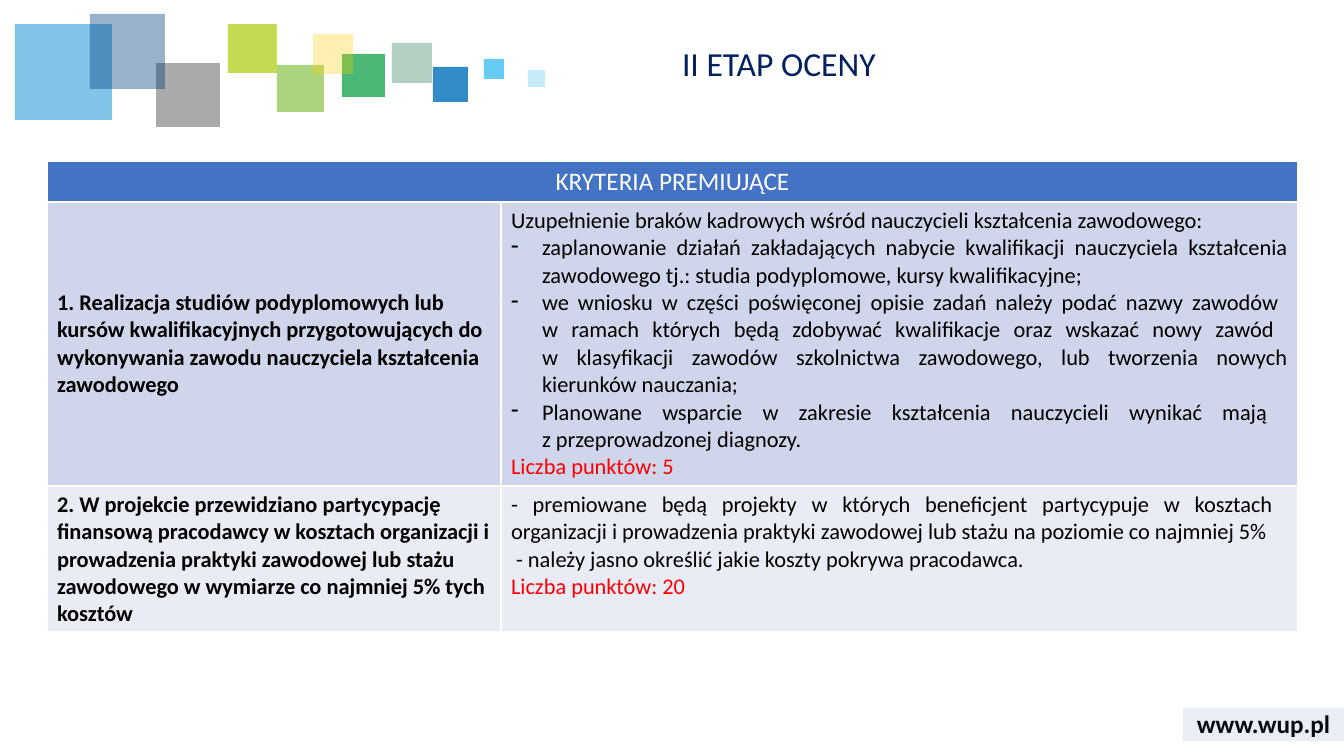
from copy import deepcopy
from pptx import Presentation
from pptx.dml.color import RGBColor
from pptx.enum.shapes import MSO_SHAPE
from pptx.enum.text import MSO_ANCHOR, PP_ALIGN
from pptx.oxml.ns import qn
from pptx.util import Emu, Pt
from lxml.etree import SubElement

COLORS = {
    "black": "000000", "white": "FFFFFF", "red": "FF0000", "navy": "002060",
    "header": "4472C4", "band_dark": "CFD5EA", "band_light": "E9EBF5", "footer": "2F5597",
    "pine": "006138", "blue": "006EB9", "green": "009A3C", "azure": "028BD3",
    "leaf": "75B82A", "gray": "575757", "indigo": "003D7C", "sky": "40C0F1",
    "lime": "AFCA0B", "yellow": "FED000",
}


def px(*lengths):
    return [Emu(round(length * 914400 / 100.8)) for length in lengths]


def write(frame, text, size=16, color="black", bold=False, align=PP_ALIGN.LEFT, bullet=None, spacing=None):
    paragraph = frame.paragraphs[0] if not frame.text else frame.add_paragraph()
    paragraph.text = text
    paragraph.alignment = align
    if spacing:
        paragraph.line_spacing = spacing
    if bullet:
        properties = paragraph._p.get_or_add_pPr()
        indent = px(31)[0]
        properties.set("marL", str(indent))
        properties.set("indent", str(-indent))
        SubElement(properties, qn("a:buChar")).set("char", bullet)
    for run in paragraph.runs:
        run.font.name = "Calibri"
        run.font.size = Pt(size)
        run.font.bold = bold
        run.font.color.rgb = RGBColor.from_string(COLORS[color])
    for line_break in paragraph._p.findall(qn("a:br")):
        line_break.append(deepcopy(paragraph.runs[0]._r.rPr))


presentation = Presentation()
presentation.slide_width, presentation.slide_height = px(1344, 756)
slide = presentation.slides.add_slide(presentation.slide_layouts[5])

title = slide.shapes.title
title.left, title.top, title.width, title.height = px(672, 42, 641, 55)
title.text_frame.vertical_anchor = MSO_ANCHOR.TOP
write(title.text_frame, "II ETAP OCENY", size=24, color="navy", spacing=0.9)

footer = slide.shapes.add_textbox(*px(1183, 703, 161, 40))
footer.text_frame.word_wrap = True
footer.text_frame.vertical_anchor = MSO_ANCHOR.MIDDLE
write(footer.text_frame, "www.wup.pl", size=18, bold=True, align=PP_ALIGN.CENTER)

rectangles = [
    (392, 43, 40, 40, "pine", 30),
    (433, 67, 35, 35, "blue", 80),
    (342, 54, 43, 43, "green", 70),
    (15, 24, 97, 96, "azure", 50),
    (277, 65, 47, 47, "leaf", 60),
    (156, 63, 64, 64, "gray", 50),
    (90, 14, 75, 75, "indigo", 40),
    (484, 59, 20, 20, "sky", 80),
    (228, 24, 49, 49, "lime", 70),
    (313, 34, 40, 40, "yellow", 30),
    (528, 70, 17, 17, "sky", 30),
    (1183, 708, 161, 33, "footer", 10),
]
for left, top, width, height, color, opacity in rectangles:
    rectangle = slide.shapes.add_shape(MSO_SHAPE.RECTANGLE, *px(left, top, width, height))
    rectangle.shadow.inherit = False
    rectangle.line.fill.background()
    rectangle.fill.solid()
    rectangle.fill.fore_color.rgb = RGBColor.from_string(COLORS[color])
    color_element = rectangle._element.spPr.find(qn("a:solidFill"))[0]
    SubElement(color_element, qn("a:alpha")).set("val", str(opacity * 1000))

criteria = [
    (
        "1. Realizacja studiów podyplomowych lub kursów kwalifikacyjnych przygotowujących do "
        "wykonywania zawodu nauczyciela kształcenia zawodowego",
        [
            ("Uzupełnienie braków kadrowych wśród nauczycieli kształcenia zawodowego:", None),
            ("zaplanowanie działań zakładających nabycie kwalifikacji nauczyciela kształcenia "
             "zawodowego tj.: studia podyplomowe, kursy kwalifikacyjne;", "-"),
            ("we wniosku w części poświęconej opisie zadań należy podać nazwy zawodów \n"
             "w ramach których będą zdobywać kwalifikacje oraz wskazać nowy zawód \n"
             "w klasyfikacji zawodów szkolnictwa zawodowego, lub tworzenia nowych "
             "kierunków nauczania; ", "-"),
            ("Planowane wsparcie w zakresie kształcenia nauczycieli wynikać mają \n"
             "z przeprowadzonej diagnozy.", "-"),
        ],
        "Liczba punktów: 5",
        "band_dark",
    ),
    (
        "2. W projekcie przewidziano partycypację finansową pracodawcy w kosztach organizacji i "
        "prowadzenia praktyki zawodowej lub stażu zawodowego w wymiarze co najmniej 5% tych kosztów",
        [
            ("- premiowane będą projekty w których beneficjent partycypuje w kosztach \n"
             "organizacji i prowadzenia praktyki zawodowej lub stażu na poziomie co najmniej 5%", None),
            (" - należy jasno określić jakie koszty pokrywa pracodawca.", None),
        ],
        "Liczba punktów: 20",
        "band_light",
    ),
]

table = slide.shapes.add_table(3, 2, *px(47, 161, 1251, 471)).table
for column, width in zip(table.columns, px(454, 797)):
    column.width = width
for row, height in zip(table.rows, px(41, 284, 146)):
    row.height = height

header = table.cell(0, 0)
header.merge(table.cell(0, 1))
write(header.text_frame, "KRYTERIA PREMIUJĄCE", size=18, color="white", align=PP_ALIGN.CENTER)
header.fill.solid()
header.fill.fore_color.rgb = RGBColor.from_string(COLORS["header"])

for row_index, (criterion, details, points, band) in enumerate(criteria, 1):
    criterion_cell, details_cell = table.rows[row_index].cells
    criterion_cell.vertical_anchor = MSO_ANCHOR.MIDDLE
    write(criterion_cell.text_frame, criterion, bold=True)
    for text, bullet in details:
        write(details_cell.text_frame, text, align=PP_ALIGN.JUSTIFY, bullet=bullet)
    write(details_cell.text_frame, points, color="red", align=PP_ALIGN.JUSTIFY)
    for cell in (criterion_cell, details_cell):
        cell.fill.solid()
        cell.fill.fore_color.rgb = RGBColor.from_string(COLORS[band])

presentation.save("out.pptx")
